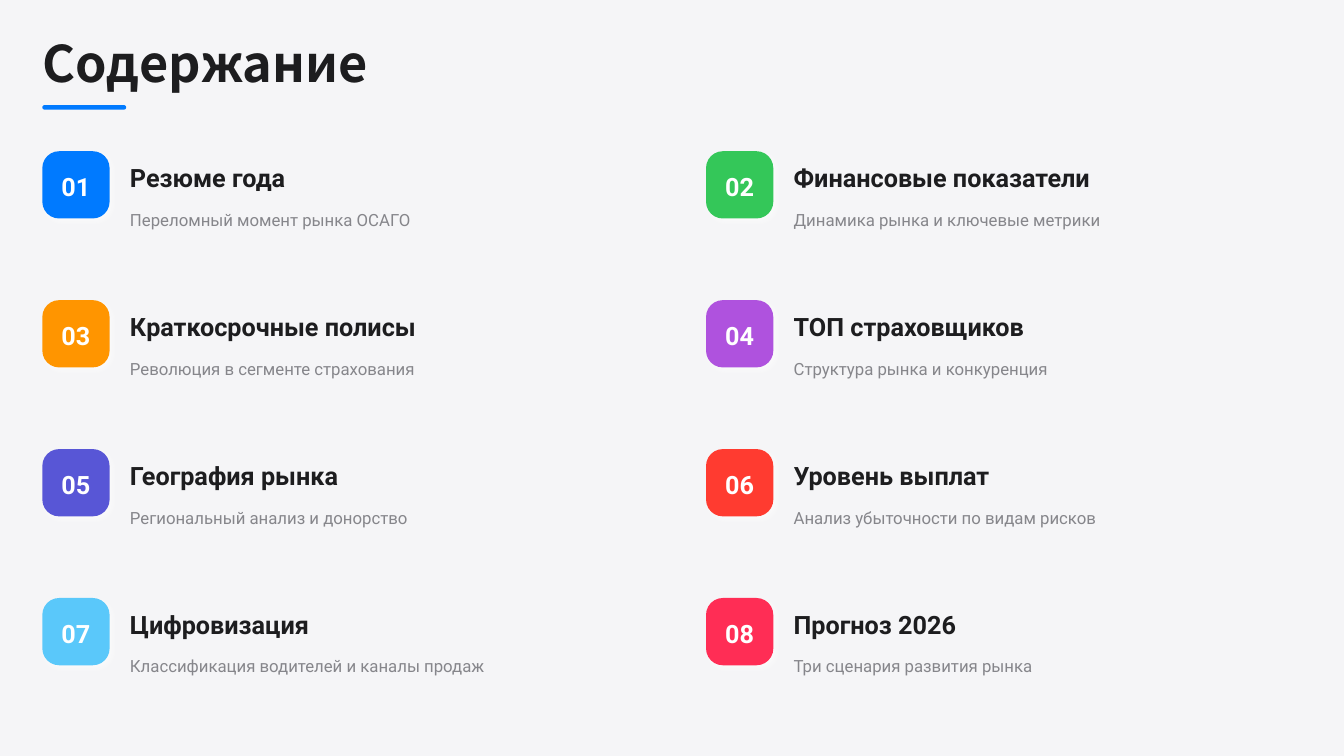
import lxml.etree
import pptx
import pptx.dml.color
import pptx.enum.shapes
import pptx.enum.text
import pptx.oxml
import pptx.oxml.ns
import pptx.util

Inches = pptx.util.Inches
ALIGN = pptx.enum.text.PP_ALIGN

LEFT = 0.56
COLUMN_STEP = 8.78
TOP = 2
ROW_STEP = 1.97
BADGE_SIZE = 0.89

TITLE = {"name": "Noto Sans CJK SC", "size": 48, "bold": True, "color": "1D1D1F"}
NUMBER = {"name": "Roboto", "size": 24, "bold": True, "color": "FFFFFF"}
HEADING = {"name": "Roboto", "size": 24, "bold": True, "color": "1D1D1F"}
SUMMARY = {"name": "Roboto", "size": 16, "bold": False, "color": "86868B"}

SECTIONS = [
    ("Резюме года", "Переломный момент рынка ОСАГО", "007AFF"),
    ("Финансовые показатели", "Динамика рынка и ключевые метрики", "34C759"),
    ("Краткосрочные полисы", "Революция в сегменте страхования", "FF9500"),
    ("ТОП страховщиков", "Структура рынка и конкуренция", "AF52DE"),
    ("География рынка", "Региональный анализ и донорство", "5856D6"),
    ("Уровень выплат", "Анализ убыточности по видам рисков", "FF3B30"),
    ("Цифровизация", "Классификация водителей и каналы продаж", "5AC8FA"),
    ("Прогноз 2026", "Три сценария развития рынка", "FF2D55"),
]


def rgb(value):
    return pptx.dml.color.RGBColor.from_string(value)


def set_text(shape, text, style, line_spacing, alignment=ALIGN.LEFT):
    frame = shape.text_frame
    frame.text = text
    frame_format = {
        "margin_left": 0,
        "margin_right": 0,
        "margin_top": 0,
        "margin_bottom": 0,
        "word_wrap": True,
        "auto_size": pptx.enum.text.MSO_AUTO_SIZE.NONE,
        "vertical_anchor": pptx.enum.text.MSO_ANCHOR.MIDDLE,
    }
    for name, value in frame_format.items():
        setattr(frame, name, value)
    paragraph = frame.paragraphs[0]
    paragraph.alignment = alignment
    paragraph.line_spacing = line_spacing
    font = paragraph.runs[0].font
    font_format = {
        "name": style["name"],
        "size": pptx.util.Pt(style["size"]),
        "bold": style["bold"],
    }
    for name, value in font_format.items():
        setattr(font, name, value)
    font.color.rgb = rgb(style["color"])


def add_title(slide, text):
    title = slide.shapes.title
    position = {"left": LEFT, "top": 0.56, "width": 17, "height": 0.67}
    for name, value in position.items():
        setattr(title, name, Inches(value))
    set_text(title, text, TITLE, 0.8)


def add_text(slide, left, top, width, height, text, style, line_spacing):
    box = slide.shapes.add_textbox(
        Inches(left), Inches(top), Inches(width), Inches(height)
    )
    set_text(box, text, style, line_spacing)


def add_rounded(slide, left, top, width, height, color, rounding):
    shape = slide.shapes.add_shape(
        pptx.enum.shapes.MSO_SHAPE.ROUNDED_RECTANGLE,
        Inches(left), Inches(top), Inches(width), Inches(height),
    )
    shape.adjustments[0] = rounding
    shape.shadow.inherit = False
    shape.fill.solid()
    shape.fill.fore_color.rgb = rgb(color)
    shape.line.fill.background()
    return shape


def add_glow_shadow(shape):
    qn = pptx.oxml.ns.qn
    effects = shape.element.spPr.find(qn("a:effectLst"))
    shadow = lxml.etree.SubElement(effects, qn("a:outerShdw"))
    shadow_format = {
        "blurRad": pptx.util.Pt(8),
        "dist": pptx.util.Pt(4),
        "dir": 45 * 60000,
        "algn": "ctr",
        "rotWithShape": 0,
    }
    for name, value in shadow_format.items():
        shadow.set(name, str(value))
    color = lxml.etree.SubElement(shadow, qn("a:srgbClr"), val="FFFFFF")
    lxml.etree.SubElement(color, qn("a:alpha"), val="75000")


def add_section(slide, index, heading, summary, color):
    row, column = divmod(index, 2)
    left = LEFT + column * COLUMN_STEP
    top = TOP + row * ROW_STEP
    badge = add_rounded(slide, left, top, BADGE_SIZE, BADGE_SIZE, color, 0.25)
    add_glow_shadow(badge)
    set_text(badge, f"{index + 1:02d}", NUMBER, 1.1, ALIGN.CENTER)
    text_left = left + 1.16
    add_text(slide, text_left, top + 0.11, 4.9, 0.44, heading, HEADING, 1.1)
    add_text(slide, text_left, top + 0.67, 4.9, 0.36, summary, SUMMARY, 1.4)


def main():
    presentation = pptx.Presentation()
    presentation.slide_width = Inches(17.78)
    presentation.slide_height = Inches(10)
    slide = presentation.slides.add_slide(presentation.slide_layouts[5])
    slide.background.fill.solid()
    slide.background.fill.fore_color.rgb = rgb("F5F5F7")
    add_title(slide, "Содержание")
    add_rounded(slide, LEFT, 1.39, 1.11, 0.06, "007AFF", 0.5)
    for index, section in enumerate(SECTIONS):
        add_section(slide, index, *section)
    presentation.save("out.pptx")


if __name__ == "__main__":
    main()
